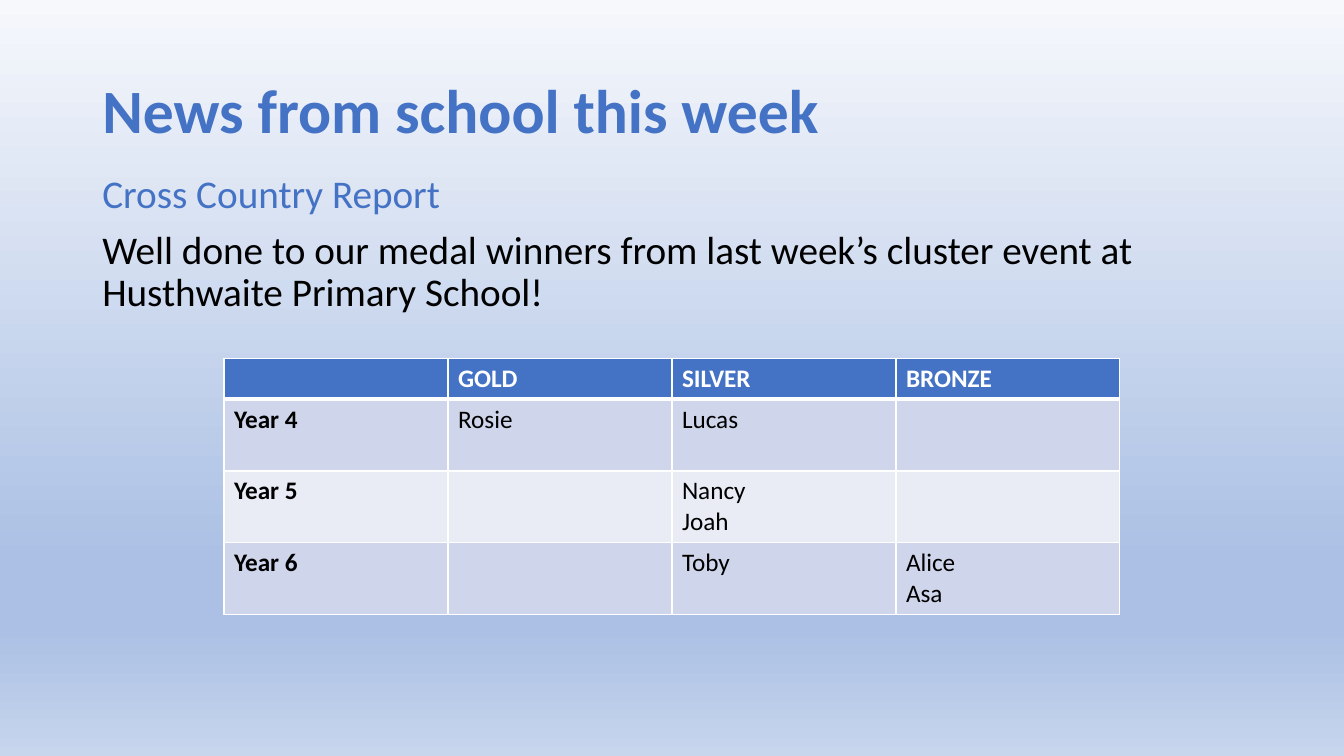
from lxml.etree import SubElement
from pptx import Presentation
from pptx.dml.color import RGBColor
from pptx.enum.text import MSO_ANCHOR
from pptx.oxml.ns import qn
from pptx.util import Pt

FONT = "Calibri"
BLUE = RGBColor(0x44, 0x72, 0xC4)
BLACK = RGBColor(0, 0, 0)
WHITE = RGBColor(0xFF, 0xFF, 0xFF)
BAND_DARK = RGBColor(0xCF, 0xD5, 0xEA)
BAND_LIGHT = RGBColor(0xE9, 0xEB, 0xF5)
SKY_PALE = RGBColor(0xF6, 0xF8, 0xFC)
SKY_DEEP = RGBColor(0xAB, 0xC0, 0xE4)
SKY_SOFT = RGBColor(0xC7, 0xD5, 0xED)
SKY_STOPS = [(0, SKY_PALE), (74, SKY_DEEP), (83, SKY_DEEP), (100, SKY_SOFT)]

REPORT = [
    ("Cross Country Report", BLUE),
    ("Well done to our medal winners from last week’s cluster event at "
     "Husthwaite Primary School!", BLACK),
]
MEDALS = [
    ["", "GOLD", "SILVER", "BRONZE"],
    ["Year 4", "Rosie", "Lucas", ""],
    ["Year 5", "", "Nancy\nJoah", ""],
    ["Year 6", "", "Toby", "Alice\nAsa"],
]
HEADER_HEIGHT, YEAR_HEIGHT = 29.2, 51.2


def paint_sky(slide):
    fill = slide.background.fill
    fill.gradient()
    fill.gradient_angle = 270
    stops = slide.element.find(".//" + qn("a:gsLst"))
    for stop in list(stops):
        stops.remove(stop)
    for percent, color in SKY_STOPS:
        stop = SubElement(stops, qn("a:gs"), pos=str(percent * 1000))
        SubElement(stop, qn("a:srgbClr"), val=str(color))


def style_runs(paragraph, size, color, bold=False):
    for run in paragraph.runs:
        run.font.name = FONT
        run.font.size = Pt(size)
        run.font.bold = bold
        run.font.color.rgb = color


def add_text(slide, box, lines, size, bold=False, space_before=0,
             anchor=MSO_ANCHOR.TOP):
    """Place (text, colour) lines as paragraphs in one box."""
    frame = slide.shapes.add_textbox(*map(Pt, box)).text_frame
    frame.word_wrap = True
    frame.vertical_anchor = anchor
    frame.text = "\n".join(text for text, _ in lines)
    for paragraph, (_, color) in zip(frame.paragraphs, lines):
        paragraph.line_spacing = 0.9
        paragraph.space_before = Pt(space_before)
        style_runs(paragraph, size, color, bold)


def border_cell(cell, widths):
    """Draw white borders; widths maps a side (L, R, T, B) to points."""
    properties = cell._tc.get_or_add_tcPr()
    for index, side in enumerate("LRTB"):
        line = SubElement(properties, qn("a:ln" + side), w=str(Pt(widths[side])))
        SubElement(SubElement(line, qn("a:solidFill")), qn("a:srgbClr"),
                   val=str(WHITE))
        properties.insert(index, line)


def add_medal_table(slide, left, top, width):
    height = HEADER_HEIGHT + YEAR_HEIGHT * (len(MEDALS) - 1)
    table = slide.shapes.add_table(len(MEDALS), len(MEDALS[0]), Pt(left), Pt(top),
                                   Pt(width), Pt(height)).table
    for row, names in enumerate(MEDALS):
        header = row == 0
        table.rows[row].height = Pt(HEADER_HEIGHT if header else YEAR_HEIGHT)
        band = BLUE if header else BAND_DARK if row % 2 else BAND_LIGHT
        for column, name in enumerate(names):
            cell = table.cell(row, column)
            cell.text = name
            cell.fill.solid()
            cell.fill.fore_color.rgb = band
            border_cell(cell, {"L": 1, "R": 1, "T": 3 if row == 1 else 1,
                               "B": 3 if header else 1})
            for paragraph in cell.text_frame.paragraphs:
                style_runs(paragraph, 18, WHITE if header else BLACK,
                           bold=header or column == 0)


def add_news_slide(deck):
    slide = deck.slides.add_slide(deck.slide_layouts[6])
    paint_sky(slide)
    add_text(slide, (66, 28.75, 828, 104.4), [("News from school this week", BLUE)],
             44, bold=True, anchor=MSO_ANCHOR.MIDDLE)
    add_text(slide, (66, 121, 828, 365), REPORT, 28, space_before=10)
    add_medal_table(slide, 160, 256, 640)


def main():
    deck = Presentation()
    deck.slide_width, deck.slide_height = Pt(960), Pt(540)
    add_news_slide(deck)
    deck.save("out.pptx")


if __name__ == "__main__":
    main()
